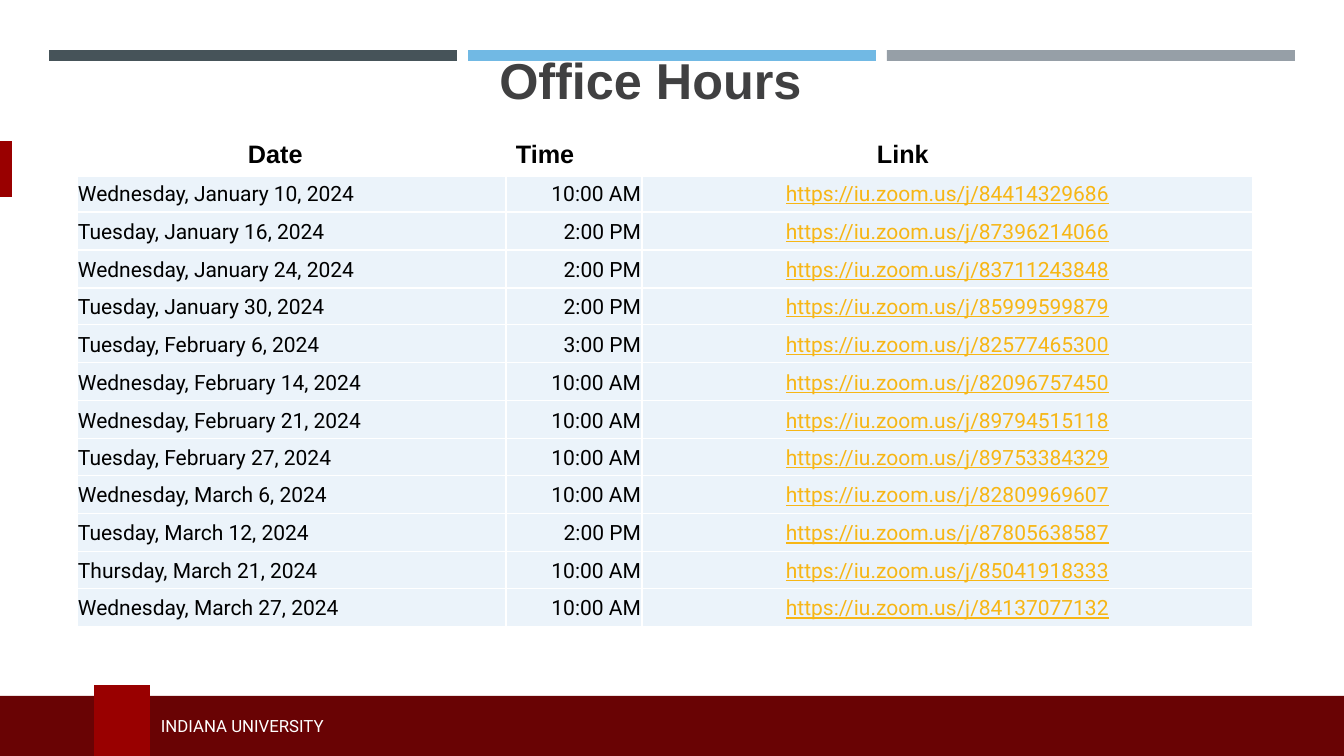
import pptx
import pptx.dml.color
import pptx.enum.shapes
import pptx.enum.text
import pptx.oxml
import pptx.oxml.ns
import pptx.util

EMU_PER_PX = 914400 / 100.8
ALIGN = pptx.enum.text.PP_ALIGN
ANCHOR = pptx.enum.text.MSO_ANCHOR

HEADERS = [("Date", 171), ("Time", 10), ("Link", 235)]  # label, left inset
OFFICE_HOURS = [
    ("Wednesday, January 10, 2024", "10:00 AM", "84414329686"),
    ("Tuesday, January 16, 2024", "2:00 PM", "87396214066"),
    ("Wednesday, January 24, 2024", "2:00 PM", "83711243848"),
    ("Tuesday, January 30, 2024", "2:00 PM", "85999599879"),
    ("Tuesday, February 6, 2024", "3:00 PM", "82577465300"),
    ("Wednesday, February 14, 2024", "10:00 AM", "82096757450"),
    ("Wednesday, February 21, 2024", "10:00 AM", "89794515118"),
    ("Tuesday, February 27, 2024", "10:00 AM", "89753384329"),
    ("Wednesday, March 6, 2024", "10:00 AM", "82809969607"),
    ("Tuesday, March 12, 2024", "2:00 PM", "87805638587"),
    ("Thursday, March 21, 2024", "10:00 AM", "85041918333"),
    ("Wednesday, March 27, 2024", "10:00 AM", "84137077132"),
]
COLUMN_WIDTHS = [429, 136, 611]
TABLE_HEIGHT = 490


def px(length):
    return pptx.util.Emu(round(length * EMU_PER_PX))


def color(hex_string):
    return pptx.dml.color.RGBColor.from_string(hex_string)


def add_bar(slide, left, top, width, height, fill):
    shape = slide.shapes.add_shape(
        pptx.enum.shapes.MSO_SHAPE.RECTANGLE, px(left), px(top), px(width), px(height))
    shape.shadow.inherit = False
    shape.fill.solid()
    shape.fill.fore_color.rgb = color(fill)
    shape.line.fill.background()


def add_run(paragraph, text, size, font, hex_string, bold=False, underline=False):
    run = paragraph.add_run()
    run.text = text
    run.font.size = pptx.util.Pt(size)
    run.font.name = font
    run.font.color.rgb = color(hex_string)
    run.font.bold = bold
    run.font.underline = underline


def add_text(slide, left, top, width, height, anchor, align, text, *style):
    frame = slide.shapes.add_textbox(px(left), px(top), px(width), px(height)).text_frame
    frame.word_wrap = True
    frame.vertical_anchor = anchor
    frame.paragraphs[0].alignment = align
    add_run(frame.paragraphs[0], text, *style)


def set_borders(cell, top, bottom):
    properties = cell._tc.get_or_add_tcPr()
    widths = {"lnL": 1, "lnR": 1, "lnT": top, "lnB": bottom}
    for index, (side, width) in enumerate(widths.items()):
        properties.insert(index, pptx.oxml.parse_xml(
            f'<a:{side} {pptx.oxml.ns.nsdecls("a")} w="{pptx.util.Pt(width)}">'
            f'<a:solidFill><a:srgbClr val="FFFFFF"/></a:solidFill></a:{side}>'))


def set_cell(cell, left, top, anchor, align, text, *style):
    cell.margin_left, cell.margin_top = px(left), px(top)
    cell.margin_right, cell.margin_bottom = px(1), px(0)
    cell.vertical_anchor = anchor
    paragraph = cell.text_frame.paragraphs[0]
    paragraph.alignment = align
    add_run(paragraph, text, *style)


def add_schedule(slide):
    row_count = len(OFFICE_HOURS) + 1
    table = slide.shapes.add_table(
        row_count, len(HEADERS), px(77), px(137),
        px(sum(COLUMN_WIDTHS)), px(TABLE_HEIGHT)).table
    table.first_row = table.horz_banding = False
    for column, width in zip(table.columns, COLUMN_WIDTHS):
        column.width = px(width)

    # Rows share the height, with edges on whole pixels
    edges = [round(index * TABLE_HEIGHT / row_count) for index in range(row_count + 1)]
    for row, start, end in zip(table.rows, edges, edges[1:]):
        row.height = px(end - start)

    # Header row
    for column, (label, inset) in enumerate(HEADERS):
        cell = table.cell(0, column)
        cell.fill.background()
        set_borders(cell, 1, 3)
        set_cell(cell, inset, 4, ANCHOR.TOP, ALIGN.LEFT, label, 18, "Arial", "000000", True)

    # Sessions
    for row, (date, time, meeting) in enumerate(OFFICE_HOURS, 1):
        entries = [
            (date, ALIGN.LEFT, "000000", False),
            (time, ALIGN.RIGHT, "000000", False),
            (f"https://iu.zoom.us/j/{meeting}", ALIGN.CENTER, "F7B615", True),
        ]
        for column, (text, align, text_color, underline) in enumerate(entries):
            cell = table.cell(row, column)
            cell.fill.solid()
            cell.fill.fore_color.rgb = color("EBF3FA")
            set_borders(cell, 3 if row == 1 else 1, 1)
            set_cell(cell, 1, 2, ANCHOR.MIDDLE, align, text,
                     15, "Roboto", text_color, False, underline)


def main():
    presentation = pptx.Presentation()
    presentation.slide_width, presentation.slide_height = px(1344), px(756)
    slide = presentation.slides.add_slide(presentation.slide_layouts[6])

    # Top bars and side tab
    for index, fill in enumerate(["465359", "71B9E4", "969FA7"]):
        add_bar(slide, 49 + index * 419, 50, 408, 11, fill)
    add_bar(slide, 0, 141, 12, 56, "990000")

    # Footer
    add_bar(slide, 0, 696, 1344, 60, "690304")
    add_bar(slide, 94, 685, 56, 71, "990000")
    add_text(slide, 151, 711, 531, 30, ANCHOR.MIDDLE, ALIGN.LEFT,
             "INDIANA UNIVERSITY", 12, "Roboto", "FFFFFF")

    # Title and schedule
    add_text(slide, 482, 41, 337, 74, ANCHOR.BOTTOM, ALIGN.CENTER,
             "Office Hours", 36, "Arial", "404041", True)
    add_schedule(slide)

    presentation.save("out.pptx")


if __name__ == "__main__":
    main()
